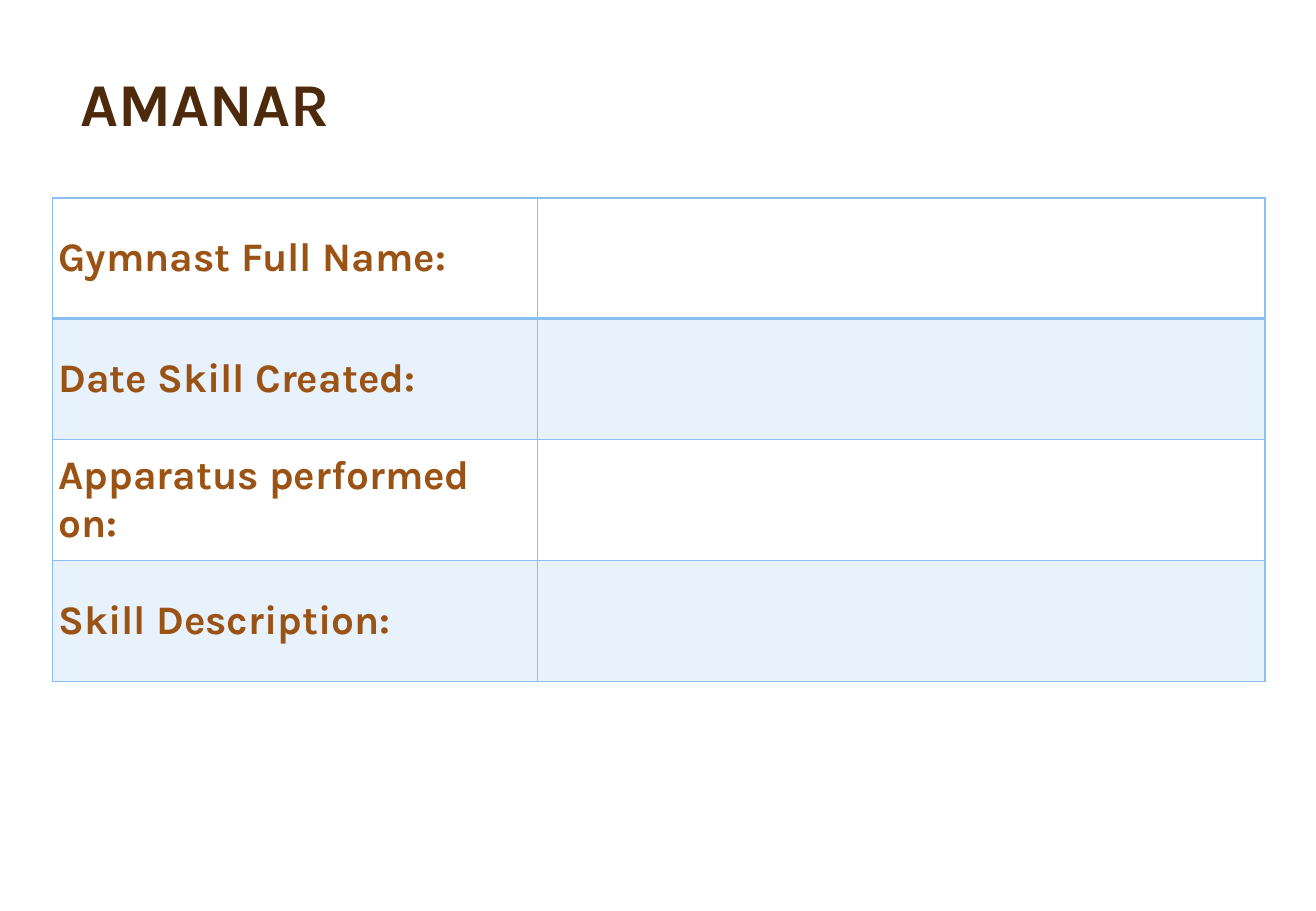
from lxml.etree import SubElement
from pptx import Presentation
from pptx.dml.color import RGBColor
from pptx.enum.text import MSO_ANCHOR, PP_ALIGN
from pptx.oxml.ns import qn
from pptx.util import Inches, Pt

FONT = "Karla"
DARK_BROWN = RGBColor(0x4D, 0x2A, 0x0B)
BROWN = RGBColor(0x9A, 0x53, 0x15)
BLUE = RGBColor(0x8B, 0xBE, 0xF1)

MARGIN = Inches(0.05)
LEFT, TOP = Inches(0.43), Inches(1.63)
TABLE_WIDTH, TABLE_HEIGHT = Inches(9.98), Inches(3.98)
COLUMN_SHARES = (0.4, 0.6)
LABELS = (
    "Gymnast Full Name:",
    "Date Skill Created:",
    "Apparatus performed on:",
    "Skill Description:",
)


def format_text(paragraph, size, color):
    paragraph.alignment = PP_ALIGN.LEFT
    for run in paragraph.runs:
        run.font.name = FONT
        run.font.size = Pt(size)
        run.font.bold = True
        run.font.color.rgb = color


def add_title(slide, text):
    title = slide.shapes.title
    title.left, title.top = Inches(0.56), Inches(0.46)
    title.width, title.height = Inches(8.94), Inches(0.74)
    frame = title.text_frame
    frame.text = text
    frame.vertical_anchor = MSO_ANCHOR.BOTTOM
    frame.paragraphs[0].line_spacing = 0.9
    format_text(frame.paragraphs[0], 36, DARK_BROWN)


def set_borders(cell, **widths):
    properties = cell._tc.get_or_add_tcPr()
    for side, width in widths.items():
        line = SubElement(properties, qn(f"a:ln{side}"), w=str(Pt(width)))
        fill = SubElement(line, qn("a:solidFill"))
        SubElement(fill, qn("a:srgbClr"), val=str(BLUE))


def set_fill(cell, tinted):
    if not tinted:
        cell.fill.background()
        return
    cell.fill.solid()
    cell.fill.fore_color.rgb = BLUE
    color = cell._tc.tcPr.find(qn("a:solidFill")).find(qn("a:srgbClr"))
    SubElement(color, qn("a:alpha"), val="20000")


def format_cell(cell, row):
    cell.vertical_anchor = MSO_ANCHOR.MIDDLE
    cell.margin_left = cell.margin_right = MARGIN
    cell.margin_top = cell.margin_bottom = MARGIN
    # The line under the first row is thicker
    set_borders(cell, L=1, R=1, T=2 if row == 1 else 1, B=2 if row == 0 else 1)
    set_fill(cell, tinted=row % 2 == 1)


def add_form_table(slide, labels):
    table = slide.shapes.add_table(
        len(labels), len(COLUMN_SHARES), LEFT, TOP, TABLE_WIDTH, TABLE_HEIGHT
    ).table
    table.first_row = table.horz_banding = False
    for column, share in zip(table.columns, COLUMN_SHARES):
        column.width = int(TABLE_WIDTH * share)
    for row, label in enumerate(labels):
        for column in range(len(COLUMN_SHARES)):
            format_cell(table.cell(row, column), row)
        label_cell = table.cell(row, 0)
        label_cell.text = label
        format_text(label_cell.text_frame.paragraphs[0], 24, BROWN)


def main():
    presentation = Presentation()
    presentation.slide_width = Inches(10.83)
    presentation.slide_height = Inches(7.5)
    slide = presentation.slides.add_slide(presentation.slide_layouts[5])
    add_title(slide, "AMANAR")
    add_form_table(slide, LABELS)
    presentation.save("out.pptx")


if __name__ == "__main__":
    main()
